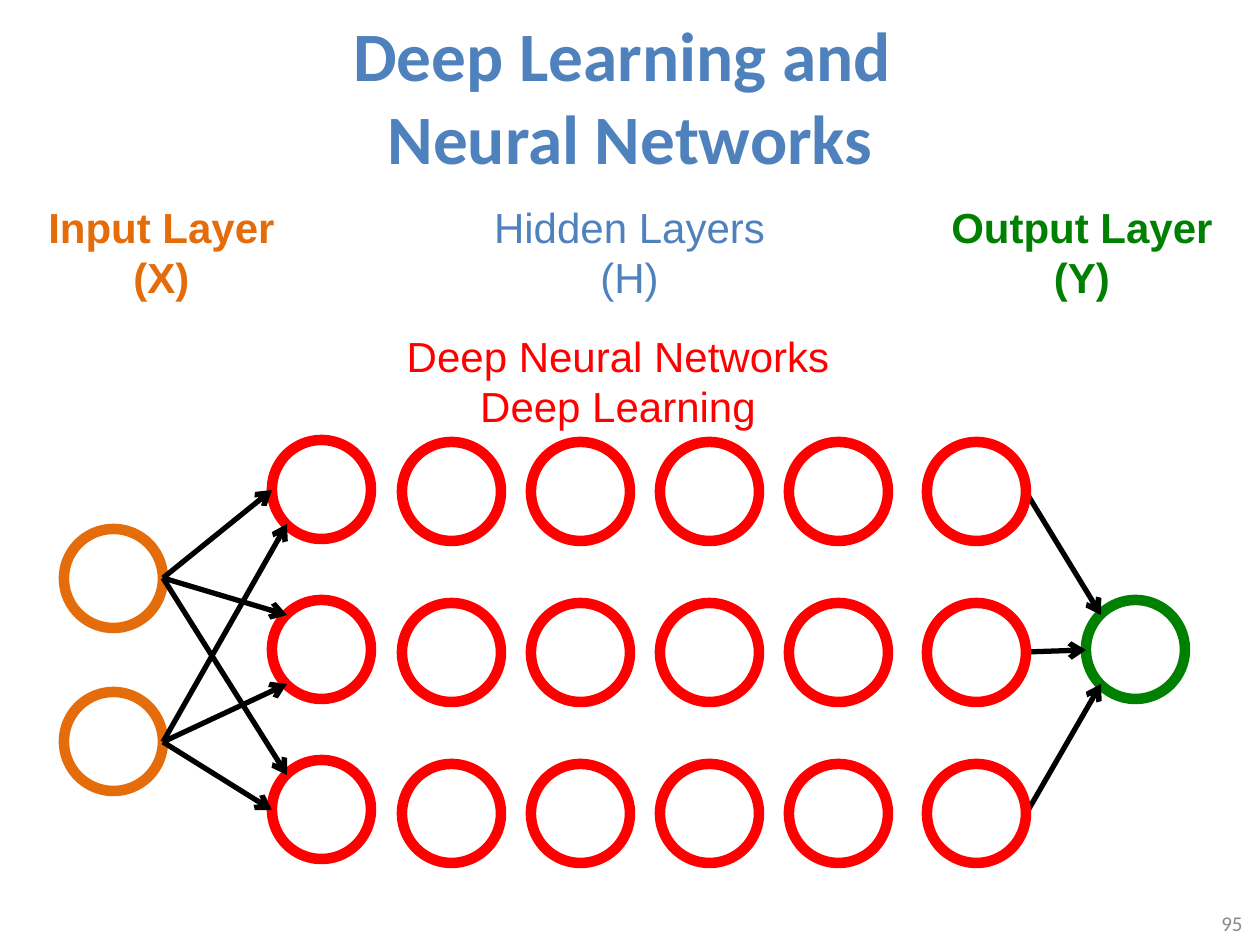
import pptx
import pptx.dml.color
import pptx.enum.shapes
import pptx.enum.text
import pptx.oxml.ns
import pptx.util
from dataclasses import dataclass
from lxml import etree
from pptx.enum.text import MSO_ANCHOR, MSO_AUTO_SIZE, PP_ALIGN

SCALE = 914400 / 126
SIZE = 99
COLORS = {
    "blue": "4F81BD",
    "orange": "E46C0A",
    "red": "FF0000",
    "green": "008000",
    "black": "000000",
    "white": "FFFFFF",
    "gray": "898989",
}
# Where an arrow may touch a circle, as fractions of its box
SIDES = {
    "left": (0, 0.5),
    "right": (1, 0.5),
    "upper": (0.15, 0.15),
    "lower": (0.15, 0.85),
}


@dataclass(frozen=True)
class Node:
    x: int
    y: int
    color: str
    fill: str | None = None

    def port(self, side: str) -> tuple[int, int]:
        """Point in px where an arrow meets the circle."""
        across, down = SIDES[side]
        return round(self.x + SIZE * across), round(self.y + SIZE * down)


@dataclass(frozen=True)
class Link:
    start: Node
    end: Node
    side: str


def emu(px: int) -> pptx.util.Emu:
    return pptx.util.Emu(round(px * SCALE))


def rgb(name: str) -> pptx.dml.color.RGBColor:
    return pptx.dml.color.RGBColor.from_string(COLORS[name])


def add_text(slide, text: str, box: tuple[int, int, int, int], *, color: str,
             size: float = 24, font: str = "Arial", bold: bool = False,
             align=PP_ALIGN.CENTER, anchor=MSO_ANCHOR.TOP,
             wrap: bool = False) -> None:
    """Write text in a box; a newline starts a paragraph, \\v breaks a line."""
    frame = slide.shapes.add_textbox(*map(emu, box)).text_frame
    frame.word_wrap = wrap
    frame.auto_size = MSO_AUTO_SIZE.NONE if wrap else MSO_AUTO_SIZE.SHAPE_TO_FIT_TEXT
    frame.vertical_anchor = anchor
    frame.text = text
    for para in frame.paragraphs:
        para.alignment = align
        for run in para.runs:
            run.font.name = font
            run.font.size = pptx.util.Pt(size)
            run.font.bold = bold
            run.font.color.rgb = rgb(color)


def add_node(slide, node: Node) -> None:
    shape = slide.shapes.add_shape(
        pptx.enum.shapes.MSO_SHAPE.OVAL,
        emu(node.x), emu(node.y), emu(SIZE), emu(SIZE))
    shape.shadow.inherit = False
    if node.fill:
        shape.fill.solid()
        shape.fill.fore_color.rgb = rgb(node.fill)
    else:
        shape.fill.background()
    shape.line.color.rgb = rgb(node.color)
    shape.line.width = pptx.util.Pt(6)


def add_link(slide, link: Link) -> None:
    ends = link.start.port("right") + link.end.port(link.side)
    line = slide.shapes.add_connector(
        pptx.enum.shapes.MSO_CONNECTOR.STRAIGHT, *map(emu, ends))
    line.line.color.rgb = rgb("black")
    line.line.width = pptx.util.Pt(3)
    qn = pptx.oxml.ns.qn
    etree.SubElement(line.line._get_or_add_ln(), qn("a:tailEnd"), type="arrow")
    etree.SubElement(line._element.spPr, qn("a:effectLst"))


def main() -> None:
    deck = pptx.Presentation()
    deck.slide_width, deck.slide_height = emu(1260), emu(945)
    slide = deck.slides.add_slide(deck.slide_layouts[6])

    inputs = [Node(64, y, "orange") for y in (529, 692)]
    first = [Node(272, 440 + 160 * row, "red") for row in range(3)]
    output = Node(1086, 600, "green")
    columns = [402 + 129 * col for col in range(4)] + [927]
    hidden = [[Node(x, 442 + 161 * row, "red", "white") for row in range(3)]
              for x in columns]

    fans = zip(inputs, [("left", "upper", "upper"), ("lower", "lower", "left")])
    links = [Link(start, end, side) for start, sides in fans
             for end, side in zip(first, sides)]
    links += [Link(start, output, side)
              for start, side in zip(hidden[-1], ("upper", "left", "lower"))]

    for node in inputs + first + [output]:
        add_node(slide, node)
    for link in links:
        add_link(slide, link)
    for column in hidden:
        for node in column:
            add_node(slide, node)

    add_text(slide, "Input Layer\n(X)", (34, 195, 255, 115),
             color="orange", bold=True)
    add_text(slide, "Hidden Layers\n(H)", (480, 195, 299, 115), color="blue")
    add_text(slide, "Output Layer\n(Y)", (937, 195, 290, 115),
             color="green", bold=True)
    add_text(slide, "Deep Neural Networks\nDeep Learning",
             (392, 324, 452, 115), color="red")
    add_text(slide, "Deep Learning and \vNeural Networks", (63, 16, 1134, 158),
             color="blue", size=39.6, font="Calibri", bold=True,
             anchor=MSO_ANCHOR.MIDDLE, wrap=True)
    add_text(slide, "95", (961, 898, 294, 50), color="gray", size=12,
             font="Calibri", align=PP_ALIGN.RIGHT,
             anchor=MSO_ANCHOR.MIDDLE, wrap=True)
    deck.save("out.pptx")


if __name__ == "__main__":
    main()
